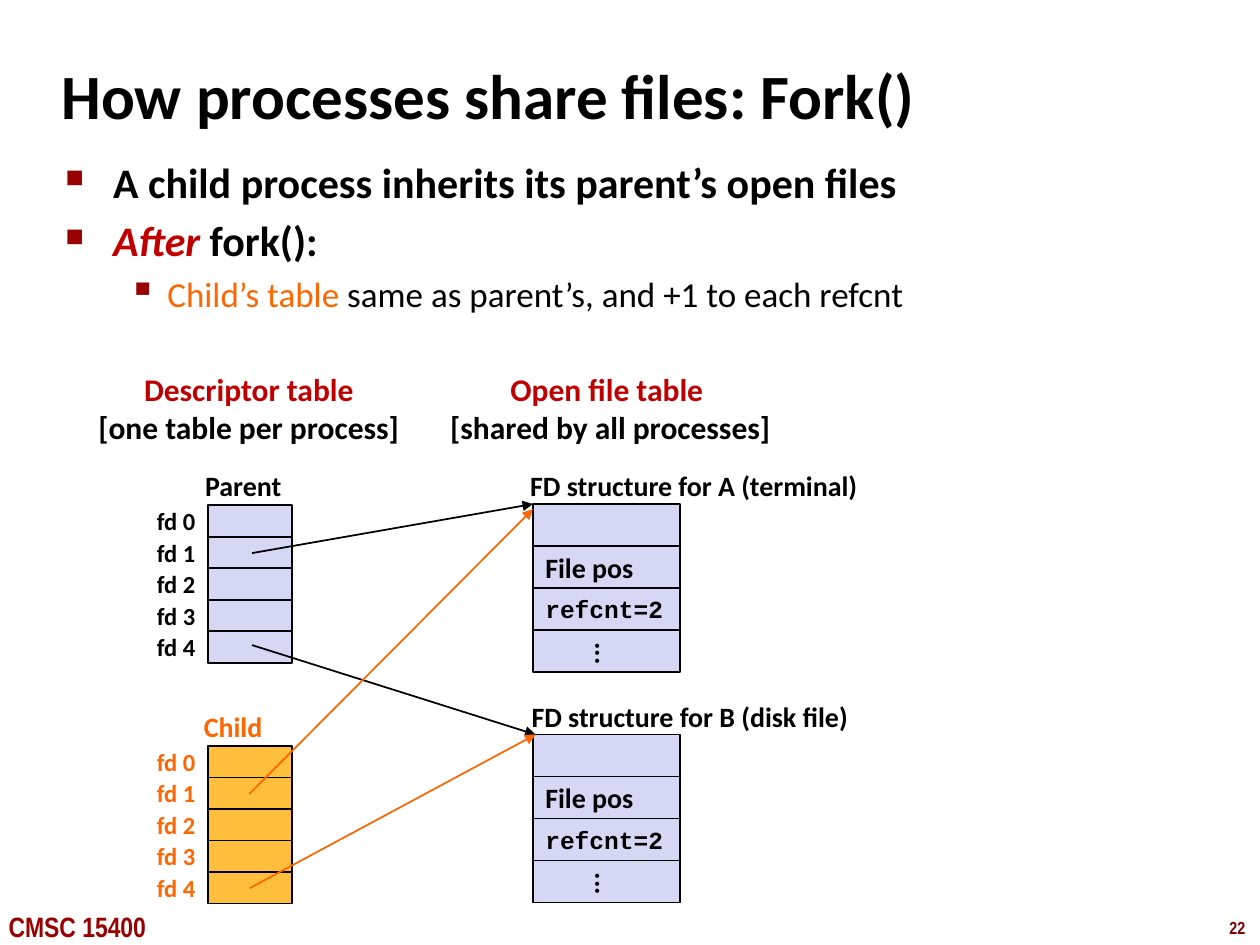
from pptx import Presentation, util as u
from pptx.dml.color import RGBColor
from pptx.enum import shapes, text
from pptx.oxml.ns import qn
from lxml import etree

BLACK = RGBColor(0x00, 0x00, 0x00)
RED = RGBColor(0xC0, 0x00, 0x00)
CRIMSON = RGBColor(0x99, 0x00, 0x00)
MAROON = RGBColor(0x80, 0x00, 0x00)
ORANGE = RGBColor(0xFF, 0x66, 0x00)
AMBER = RGBColor(0xFF, 0xBF, 0x3D)
LAVENDER = RGBColor(0xD6, 0xD6, 0xF5)

LEFT, CENTER, RIGHT = text.PP_ALIGN.LEFT, text.PP_ALIGN.CENTER, text.PP_ALIGN.RIGHT
MIDDLE, TOP = text.MSO_ANCHOR.MIDDLE, text.MSO_ANCHOR.TOP


class Lecture:
    font = "Calibri"
    line_width = u.Pt(1)

    def __init__(self, slide):
        self.slide = slide

    def run(self, paragraph, words, size, color=BLACK, bold=True, italic=False, font=None):
        run = paragraph.add_run()
        run.text = words
        run.font.name = font or self.font
        run.font.size = u.Pt(size)
        run.font.bold = bold
        run.font.italic = italic
        run.font.color.rgb = color

    def label(self, left, top, width, height, lines, size, align=LEFT,
              anchor=MIDDLE, wrap=False, font=None):
        box = self.slide.shapes.add_textbox(
            u.Inches(left), u.Inches(top), u.Inches(width), u.Inches(height))
        frame = box.text_frame
        frame.word_wrap = wrap
        frame.vertical_anchor = anchor
        for i, (words, color) in enumerate(lines):
            paragraph = frame.add_paragraph() if i else frame.paragraphs[0]
            paragraph.alignment = align
            self.run(paragraph, words, size, color, font=font)

    def bullets(self, left, top, width, height, items):
        box = self.slide.shapes.add_textbox(
            u.Inches(left), u.Inches(top), u.Inches(width), u.Inches(height))
        frame = box.text_frame
        frame.word_wrap = True
        for i, (level, runs) in enumerate(items):
            margin, hang, mark, scale, size = [
                (0.38, 0.38, "■", 60, 24), (0.81, 0.31, "▪", 110, 20)][level]
            paragraph = frame.add_paragraph() if i else frame.paragraphs[0]
            paragraph.level = level
            if i:
                paragraph.space_before = u.Pt(size * 0.2)
            props = paragraph._p.get_or_add_pPr()
            props.set("marL", str(u.Inches(margin)))
            props.set("indent", str(-u.Inches(hang)))
            tint = etree.SubElement(props, qn("a:buClr"))
            etree.SubElement(tint, qn("a:srgbClr"), val=str(CRIMSON))
            etree.SubElement(props, qn("a:buSzPct"), val=str(scale * 1000))
            etree.SubElement(props, qn("a:buChar"), char=mark)
            for words, color, italic in runs:
                self.run(paragraph, words, size, color, bold=level == 0, italic=italic)

    def cell(self, left, top, width, height, fill, words="", size=16, font=None, vertical=False):
        box = self.slide.shapes.add_shape(
            shapes.MSO_SHAPE.RECTANGLE,
            u.Inches(left), u.Inches(top), u.Inches(width), u.Inches(height))
        box.shadow.inherit = False
        box.fill.solid()
        box.fill.fore_color.rgb = fill
        box.line.color.rgb = BLACK
        box.line.width = self.line_width
        if words:
            frame = box.text_frame
            frame.word_wrap = False
            frame.vertical_anchor = MIDDLE
            if vertical:
                frame._txBody.bodyPr.set("vert", "eaVert")
            frame.paragraphs[0].alignment = LEFT
            self.run(frame.paragraphs[0], words, size, font=font)

    def descriptor_table(self, top, fill, color):
        row = 0.25
        for fd in range(5):
            self.cell(1.65, top + fd * row, 0.67, row, fill)
            self.label(0.98, top + fd * row, 0.67, row, [(f"fd {fd}", color)], 14, RIGHT)

    def file_structure(self, top):
        row = 1 / 3
        fields = [{}, {"words": "File pos"},
                  {"words": "refcnt=2", "size": 14, "font": "Courier New"},
                  {"words": "...", "vertical": True}]
        for i, field in enumerate(fields):
            self.cell(4.23, top + i * row, 1.17, row, LAVENDER, **field)

    def arrow(self, x1, y1, x2, y2, color):
        pointer = self.slide.shapes.add_connector(
            shapes.MSO_CONNECTOR.STRAIGHT,
            u.Inches(x1), u.Inches(y1), u.Inches(x2), u.Inches(y2))
        pointer.line.color.rgb = color
        pointer.line.width = self.line_width
        etree.SubElement(pointer.line._get_or_add_ln(), qn("a:tailEnd"), type="triangle")
        etree.SubElement(pointer._element.spPr, qn("a:effectLst"))


def main():
    deck = Presentation()
    deck.slide_width, deck.slide_height = u.Inches(10), u.Inches(7.5)
    page = Lecture(deck.slides.add_slide(deck.slide_layouts[6]))

    page.label(9.66, 7.23, 0.34, 0.27, [("22", MAROON)], 10, anchor=TOP, font="Arial Narrow")
    page.label(-0.03, 7.17, 1.42, 0.37, [("CMSC 15400", CRIMSON)], 16,
               anchor=TOP, font="Arial Narrow")
    page.label(0.39, 0.33, 8.3, 0.83, [("How processes share files: Fork()", BLACK)], 36, wrap=True)
    page.bullets(0.42, 1.19, 9.09, 1.42, [
        (0, [("A child process inherits its parent’s open files", BLACK, False)]),
        (0, [("After", RED, True), (" fork():", BLACK, False)]),
        (1, [("Child’s table ", ORANGE, False),
             ("same as parent’s, and +1 to each refcnt", BLACK, False)]),
    ])

    page.label(0.67, 2.88, 2.61, 0.71,
               [("Descriptor table", RED), ("[one table per process]", BLACK)], 18, CENTER)
    page.label(3.46, 2.88, 2.77, 0.71,
               [("Open file table ", RED), ("[shared by all processes]", BLACK)], 18, CENTER)

    page.descriptor_table(4.01, LAVENDER, BLACK)
    page.descriptor_table(5.92, AMBER, ORANGE)
    page.file_structure(4)
    page.file_structure(5.83)

    for left, top, width, words, color in [
        (1.53, 3.67, 0.81, "Parent", BLACK),
        (1.52, 5.58, 0.67, "Child", ORANGE),
        (4.11, 3.67, 2.84, "FD structure for A (terminal)", BLACK),
        (4.12, 5.5, 2.75, "FD structure for B (disk file)", BLACK),
    ]:
        page.label(left, top, width, 0.37, [(words, color)], 16)

    page.arrow(2, 4.39, 4.23, 4, BLACK)
    page.arrow(2, 5.12, 4.25, 5.83, BLACK)
    page.arrow(1.98, 6.3, 4.23, 4.04, ORANGE)
    page.arrow(1.98, 7.05, 4.25, 5.83, ORANGE)

    deck.save("out.pptx")


if __name__ == "__main__":
    main()
